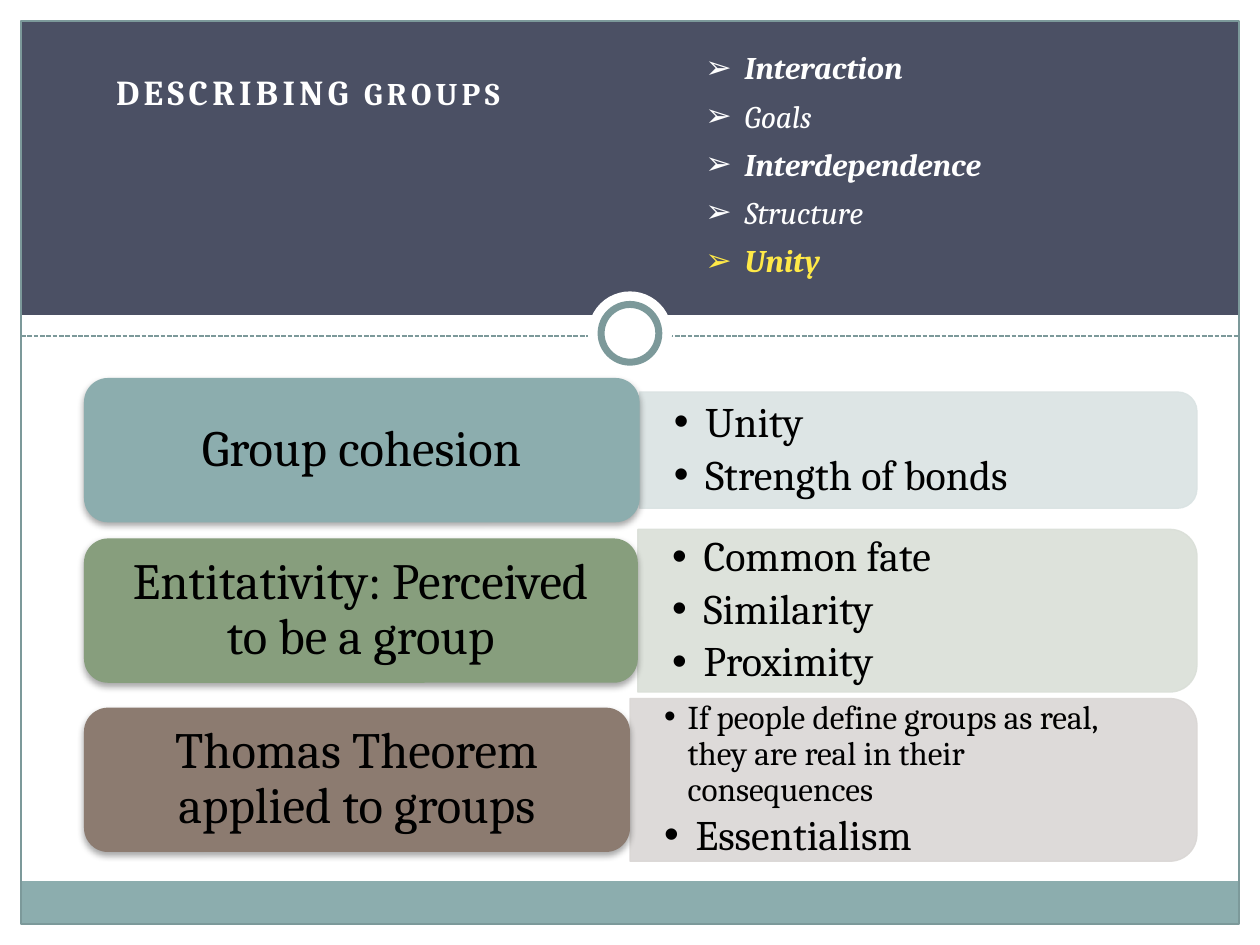
from lxml import etree
from pptx import Presentation
from pptx.dml.color import RGBColor
from pptx.enum import dml, shapes, text
from pptx.oxml import ns
from pptx.util import Pt

WHITE = RGBColor(0xFF, 0xFF, 0xFF)
BLACK = RGBColor(0, 0, 0)
NAVY = RGBColor(0x4B, 0x50, 0x64)
TEAL = RGBColor(0x8C, 0xAD, 0xAE)
EDGE = RGBColor(0x7C, 0x99, 0x9A)
YELLOW = RGBColor(0xFF, 0xE9, 0x47)
GREEN = RGBColor(0x87, 0x9E, 0x7D)
BROWN = RGBColor(0x8C, 0x7B, 0x70)
PALE_TEAL = RGBColor(0xDA, 0xE3, 0xE3)
PALE_GREEN = RGBColor(0xDA, 0xDF, 0xD8)
PALE_BROWN = RGBColor(0xDA, 0xD7, 0xD5)
SHAPE = shapes.MSO_SHAPE


def add_node(parent, tag, **values):
    """Append a DrawingML element to a parent and return it."""
    return etree.SubElement(parent, ns.qn(tag), values)


def apply(target, values):
    """Set each attribute named in a dict."""
    for name, value in values.items():
        setattr(target, name, value)


def add_shape(page, kind, box, fill=None, line=None, width=0.75):
    """Draw a preset shape without a shadow."""
    shape = page.shapes.add_shape(kind, *map(Pt, box))
    shape.shadow.inherit = False
    if fill is None:
        shape.fill.background()
    else:
        shape.fill.solid()
        shape.fill.fore_color.rgb = fill
    if line is None:
        shape.line.fill.background()
    else:
        shape.line.color.rgb = line
        shape.line.width = Pt(width)
    return shape


def set_frame(frame, margins, anchor):
    """Wrap a text frame and set its margins and anchor."""
    across, down = map(Pt, margins)
    apply(frame, dict(word_wrap=True, vertical_anchor=anchor,
                      margin_left=across, margin_right=across,
                      margin_top=down, margin_bottom=down))


def add_span(para, words, size, color=BLACK, **styles):
    """Add a run in the slide's font."""
    span = para.add_run()
    span.text = words
    apply(span.font, dict(name="Cambria", size=Pt(size), **styles))
    span.font.color.rgb = color
    return span


def add_bullet(para, mark, indent):
    """Give a paragraph a hanging bullet."""
    props = para._p.get_or_add_pPr()
    props.set("marL", str(Pt(indent)))
    props.set("indent", str(-Pt(indent)))
    add_node(props, "a:buFont", typeface="Arial")
    add_node(props, "a:buChar", char=mark)


def add_paras(frame, count):
    """Return the given number of paragraphs of an empty frame."""
    return [frame.paragraphs[0]] + [frame.add_paragraph() for _ in range(count - 1)]


def draw_backdrop(page, width, height):
    """Draw the margins, header band, footer band, frame and ring."""
    edge = 12
    inner = width - 2 * edge
    for box, fill in (
        ((0, height - edge, width, edge), WHITE),
        ((0, 0, width, edge), WHITE),
        ((width - edge, 0, edge, height), WHITE),
        ((edge, 180, inner, 24), WHITE),
        ((edge, edge, inner, 168), NAVY),
        ((edge, 503.5, inner, 24.5), TEAL),
    ):
        add_shape(page, SHAPE.RECTANGLE, box, fill)
    add_shape(page, SHAPE.RECTANGLE, (edge, edge, inner, height - 2 * edge), line=EDGE)
    rule = page.shapes.add_connector(
        shapes.MSO_CONNECTOR.STRAIGHT, *map(Pt, (edge, 192, width - edge, 192)))
    apply(rule.line, dict(width=Pt(0.9), dash_style=dml.MSO_LINE.SQUARE_DOT))
    rule.line.color.rgb = EDGE
    add_node(rule._element.spPr, "a:effectLst")
    add_shape(page, SHAPE.OVAL, (336, 166.5, 48, 48), WHITE)
    add_shape(page, SHAPE.OVAL, (343.5, 174, 33, 33), WHITE, EDGE, 4)


def draw_title(page, box):
    """Write the letter-spaced heading."""
    frame = page.shapes.add_textbox(*map(Pt, box)).text_frame
    set_frame(frame, (7.2, 3.6), text.MSO_ANCHOR.TOP)
    para = frame.paragraphs[0]
    para.alignment = text.PP_ALIGN.CENTER
    for words, size in (("DESCRIBING", 20), (" GROUPS", 18)):
        span = add_span(para, words, size, WHITE, bold=True)
        span.font._element.set("spc", "250")


def draw_topics(page, box, topics):
    """List the features of groups with arrow bullets."""
    frame = page.shapes.add_textbox(*map(Pt, box)).text_frame
    set_frame(frame, (7.2, 3.6), text.MSO_ANCHOR.TOP)
    for index, (para, topic) in enumerate(zip(add_paras(frame, len(topics)), topics)):
        words, color, bold = topic
        para.space_before = Pt(6 if index else 0)
        add_bullet(para, "➢", 22.5)
        add_span(para, words, 18, color, bold=bold, italic=True)


def draw_panel(page, box, fill, points):
    """Draw a panel rounded on its right, with bulleted points."""
    left, top, width, height = box
    turned = (left + (width - height) / 2, top + (height - width) / 2, height, width)
    panel = add_shape(page, SHAPE.ROUND_2_SAME_RECTANGLE, turned, fill, fill)
    panel.rotation = 90
    for color in panel._element.spPr.iter(ns.qn("a:srgbClr")):
        add_node(color, "a:alpha", val="90000")
    inset = height * 0.05
    area = (left, top + inset, width - inset, height - 2 * inset)
    frame = page.shapes.add_textbox(*map(Pt, area)).text_frame
    set_frame(frame, (19.5, 10), text.MSO_ANCHOR.MIDDLE)
    for para, (words, size, indent) in zip(add_paras(frame, len(points)), points):
        apply(para, dict(line_spacing=0.9, space_after=Pt(size * 0.17)))
        add_bullet(para, "•", indent)
        add_span(para, words, size)


def draw_label(page, box, fill, words):
    """Draw a rounded, shadowed label."""
    label = add_shape(page, SHAPE.ROUNDED_RECTANGLE, box, fill)
    effects = label._element.spPr.find(ns.qn("a:effectLst"))
    shadow = add_node(effects, "a:outerShdw", blurRad=str(Pt(4)), dist=str(Pt(2)),
                      dir="5400000", rotWithShape="0")
    add_node(add_node(shadow, "a:srgbClr", val="000000"), "a:alpha", val="35000")
    set_frame(label.text_frame, (12.7, 8.5), text.MSO_ANCHOR.MIDDLE)
    para = label.text_frame.paragraphs[0]
    apply(para, dict(alignment=text.PP_ALIGN.CENTER, line_spacing=0.9))
    add_span(para, words, 29)


def draw_row(page, box, panel_height, split, fills, words, points):
    """Draw a label and, centred beside it, its panel."""
    left, top, width, height = box
    panel_top = top + (height - panel_height) / 2
    panel = (left + split, panel_top, width - split, panel_height)
    draw_panel(page, panel, fills[1], points)
    draw_label(page, (left, top, split, height), fills[0], words)


def main():
    """Build and save the slide."""
    deck = Presentation()
    apply(deck, dict(slide_width=Pt(720), slide_height=Pt(540)))
    page = deck.slides.add_slide(deck.slide_layouts[6])
    draw_backdrop(page, 720, 540)
    draw_title(page, (13.5, 36.5, 325, 42))
    draw_topics(page, (396, 24, 246, 140), (
        ("Interaction", WHITE, True), ("Goals", WHITE, False),
        ("Interdependence", WHITE, True), ("Structure", WHITE, False),
        ("Unity", YELLOW, True)))
    rows = (
        (216, 66.5, 317.5, (TEAL, PALE_TEAL), "Group cohesion",
         (("Unity", 24, 18), ("Strength of bonds", 24, 18))),
        (307.7, 93, 316.5, (GREEN, PALE_GREEN), "Entitativity: Perceived to be a group",
         (("Common fate", 24, 18), ("Similarity", 24, 18), ("Proximity", 24, 18))),
        (404.4, 93, 312, (BROWN, PALE_BROWN), "Thomas Theorem applied to groups",
         (("If people define groups as real, they are real in their consequences", 19, 13.5),
          ("Essentialism", 24, 18))),
    )
    for top, *details in rows:
        draw_row(page, (48, top, 636, 82.5), *details)
    deck.save("out.pptx")


if __name__ == "__main__":
    main()
